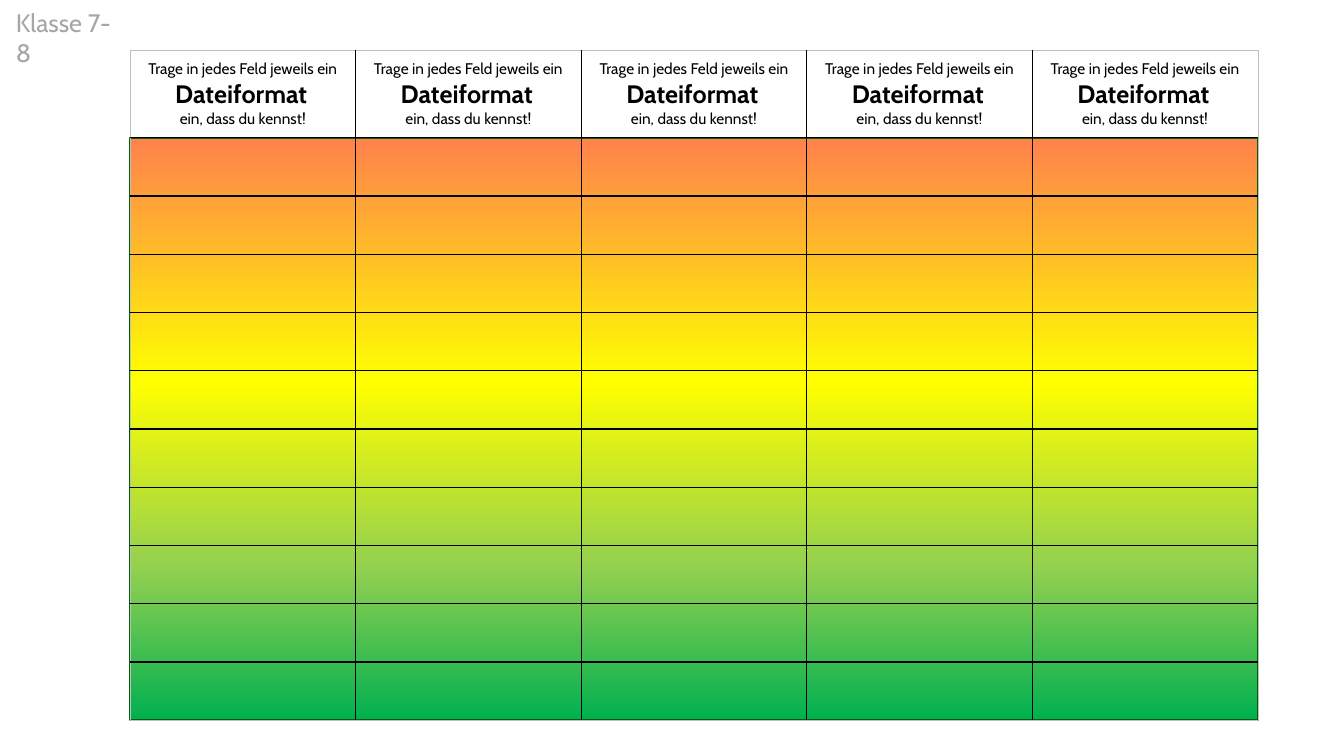
from dataclasses import dataclass

from lxml.etree import SubElement
from pptx import Presentation
from pptx.dml.color import RGBColor as RGB
from pptx.enum.shapes import MSO_SHAPE as SHAPE
from pptx.enum.text import MSO_ANCHOR as ANCHOR, MSO_AUTO_SIZE as FIT, PP_ALIGN as ALIGN
from pptx.oxml.ns import qn
from pptx.util import Cm, Pt

GRADE = "Klasse 7-8"
HEADER = [
    [("Trage in jedes Feld jeweils ein ", False), ("Dateiformat", True), (" ", False)],
    [("ein, dass du kennst!", False)],
]
COLUMNS, BODY_ROWS = 5, 10
GRADIENT = [(0, "FF814C"), (42, "FFFF00"), (74, "92D050"), (100, "00B050")]


@dataclass(frozen=True)
class Theme:
    font: str = "Cabin"
    small: int = 11
    large: int = 18
    backdrop: str = "EFEFEF"
    paper: str = "FFFFFF"
    text: str = "000000"
    label: str = "A6A6A6"
    frame: str = "006003"
    grid: str = "000000"
    edge: str = "BFBFBF"


T = Theme()
SLIDE_W, SLIDE_H = Cm(33.87), Cm(19.05)
LEFT, TOP, WIDTH = Cm(3.28), Cm(1.27), Cm(28.42)
HEADER_H, BODY_H = Cm(2.2), Cm(14.68)


def style(r, size, color, bold=False):
    r.font.name, r.font.size, r.font.bold = T.font, Pt(size), bold
    r.font.color.rgb = RGB.from_string(color)


def add_rect(shapes, x, y, w, h, line):
    sp = shapes.add_shape(SHAPE.RECTANGLE, x, y, w, h)
    sp.shadow.inherit = False
    sp.line.color.rgb = RGB.from_string(line)
    sp.line.width = Pt(1.5)
    return sp


def fill_gradient(sp):
    """Fill a shape from top to bottom with the GRADIENT stops."""
    sp.fill.gradient()
    sp.fill.gradient_angle = 270
    stops = sp._element.spPr.find(qn("a:gradFill")).find(qn("a:gsLst"))
    for gs in list(stops):
        stops.remove(gs)
    for percent, color in GRADIENT:
        gs = SubElement(stops, qn("a:gs"), pos=str(percent * 1000))
        SubElement(gs, qn("a:srgbClr"), val=color)


def set_borders(cell, outer):
    """Draw the four sides; outer names the sides on the table's edge."""
    tcPr = cell._tc.get_or_add_tcPr()
    for side in "LRTB":
        width, color = (Pt(0.25), T.edge) if side in outer else (Pt(1), T.grid)
        ln = SubElement(tcPr, qn(f"a:ln{side}"), w=str(width))
        SubElement(SubElement(ln, qn("a:solidFill")), qn("a:srgbClr"), val=color)


def write_header(cell):
    cell.vertical_anchor = ANCHOR.MIDDLE
    tf = cell.text_frame
    for i, runs in enumerate(HEADER):
        p = tf.paragraphs[0] if i == 0 else tf.add_paragraph()
        p.alignment = ALIGN.CENTER
        for text, strong in runs:
            r = p.add_run()
            r.text = text
            style(r, T.large if strong else T.small, T.text, strong)


def add_grid(shapes):
    table = shapes.add_table(BODY_ROWS + 1, COLUMNS, LEFT, TOP, WIDTH,
                             HEADER_H + BODY_H).table
    table.first_row = table.horz_banding = False
    for column in table.columns:
        column.width = WIDTH // COLUMNS
    for i, row in enumerate(table.rows):
        row.height = HEADER_H if i == 0 else BODY_H // BODY_ROWS
        for j, cell in enumerate(row.cells):
            edges = {"T": i == 0, "B": i == BODY_ROWS,
                     "L": j == 0, "R": j == COLUMNS - 1}
            set_borders(cell, [side for side, on in edges.items() if on])
            cell.fill.background()
            if i == 0:
                write_header(cell)


def add_grade(shapes):
    tf = shapes.add_textbox(Cm(0.15), Cm(0.05), Cm(3.12), Cm(1.02)).text_frame
    tf.word_wrap = True
    tf.auto_size = FIT.SHAPE_TO_FIT_TEXT
    tf.text = GRADE
    style(tf.paragraphs[0].runs[0], T.large, T.label)


def main():
    prs = Presentation()
    prs.slide_width, prs.slide_height = SLIDE_W, SLIDE_H
    s = prs.slides.add_slide(prs.slide_layouts[6])
    s.background.fill.solid()
    s.background.fill.fore_color.rgb = RGB.from_string(T.backdrop)

    paper = add_rect(s.shapes, 0, 0, SLIDE_W, SLIDE_H, T.paper)
    paper.fill.solid()
    paper.fill.fore_color.rgb = RGB.from_string(T.paper)
    fill_gradient(add_rect(s.shapes, LEFT, TOP + HEADER_H, WIDTH, BODY_H, T.frame))
    add_grid(s.shapes)
    add_grade(s.shapes)
    prs.save("out.pptx")


if __name__ == "__main__":
    main()
